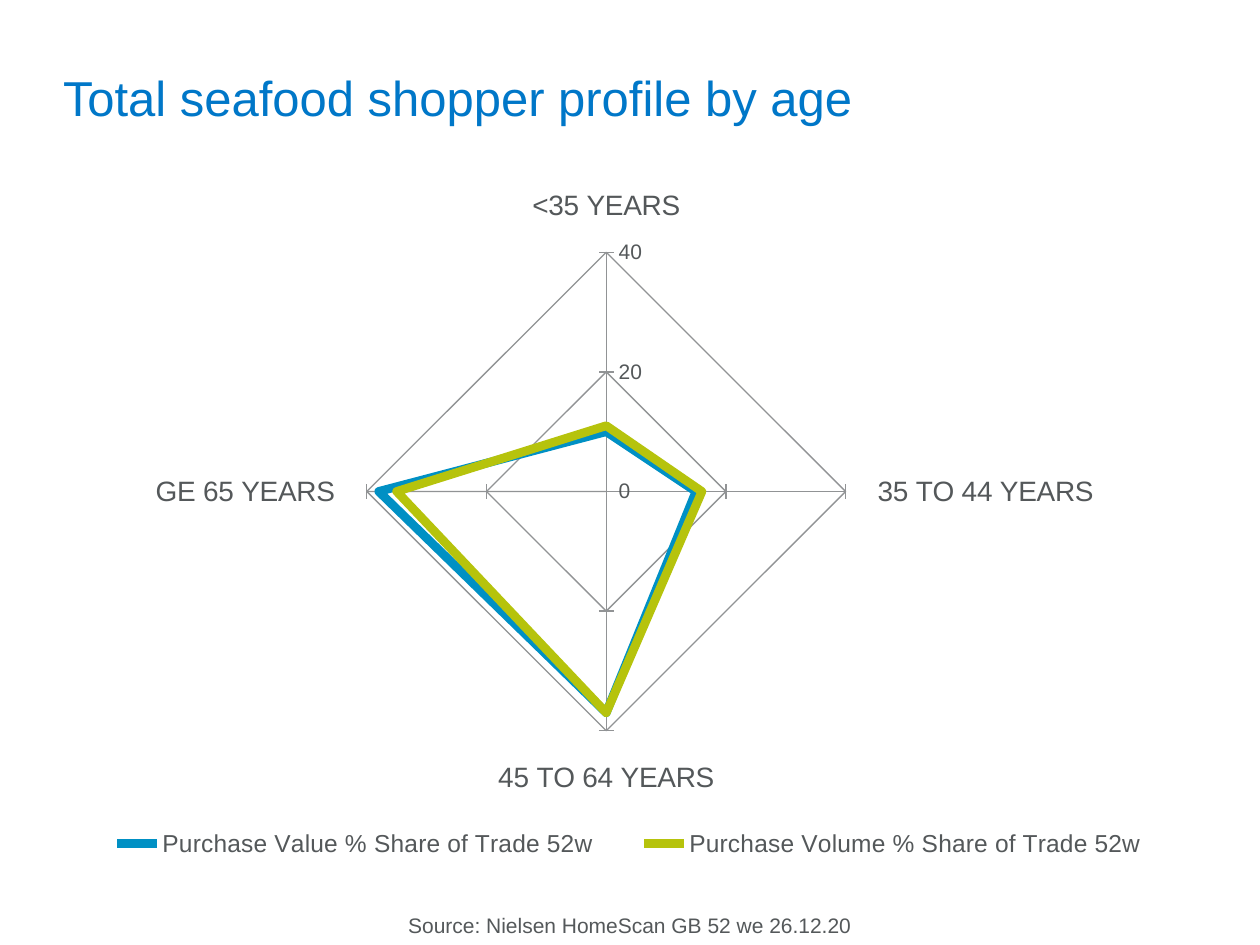
from pptx import Presentation
from pptx.chart.data import CategoryChartData
from pptx.dml.color import RGBColor
from pptx.enum.chart import XL_CHART_TYPE, XL_LEGEND_POSITION, XL_TICK_MARK
from pptx.enum.text import MSO_ANCHOR, PP_ALIGN
from pptx.oxml import parse_xml
from pptx.oxml.ns import nsdecls, qn
from pptx.util import Inches, Pt

RADAR = XL_CHART_TYPE.RADAR
BOTTOM = XL_LEGEND_POSITION.BOTTOM
OUTSIDE, CROSS = XL_TICK_MARK.OUTSIDE, XL_TICK_MARK.CROSS
MIDDLE = MSO_ANCHOR.MIDDLE
LEFT, CENTER = PP_ALIGN.LEFT, PP_ALIGN.CENTER

TITLE_BLUE = RGBColor(0x00, 0x77, 0xC8)
VALUE_BLUE = RGBColor(0x00, 0x90, 0xC4)
VOLUME_GREEN = RGBColor(0xB6, 0xC3, 0x0C)
TEXT_GREY = RGBColor(0x54, 0x58, 0x5A)
GRID_GREY = RGBColor(0x91, 0x93, 0x95)

# Content
TITLE = "Total seafood shopper profile by age"
SOURCE = "Source: Nielsen HomeScan GB 52 we 26.12.20"
AGES = ["<35 YEARS", "35 TO 44 YEARS", "45 TO 64 YEARS", "GE 65 YEARS"]
SERIES = [
    ("Purchase Value % Share of Trade 52w", (10, 15, 37, 38), VALUE_BLUE),
    ("Purchase Volume % Share of Trade 52w", (11, 16, 37, 35), VOLUME_GREEN),
]

# Places inside the chart, as fractions of its size
PLOT_LAYOUT = {"x": 0.27, "y": 0.09, "w": 0.42, "h": 0.7}
LEGEND_LAYOUT = {"x": 0.02, "y": 0.91, "w": 0.96, "h": 0.09}


def set_font(font, size, color):
    font.name, font.size, font.bold = "Arial", Pt(size), False
    font.color.rgb = color


def write_line(sp, text, size, color, align):
    tf = sp.text_frame
    tf.word_wrap = True
    p = tf.paragraphs[0]
    p.text = text
    p.alignment = align
    set_font(p.font, size, color)


def place_part(part, index, layout, target=""):
    old = part.find(qn("c:layout"))
    if old is not None:
        part.remove(old)
    sizes = "".join(f'<c:{k} val="{v}"/>' for k, v in layout.items())
    part.insert(index, parse_xml(
        f'<c:layout {nsdecls("c")}><c:manualLayout>{target}'
        f'<c:xMode val="edge"/><c:yMode val="edge"/>{sizes}'
        '</c:manualLayout></c:layout>'))


prs = Presentation()
prs.slide_width, prs.slide_height = Inches(10), Inches(7.5)
s = prs.slides.add_slide(prs.slide_layouts[5])

# Title
title = s.shapes.title
title.left, title.top = Inches(0.4), Inches(0.3)
title.width, title.height = Inches(9.17), Inches(0.94)
title.text_frame.vertical_anchor = MIDDLE
write_line(title, TITLE, 28, TITLE_BLUE, LEFT)

# Radar chart
data = CategoryChartData()
data.categories = AGES
for name, values, _ in SERIES:
    data.add_series(name, values)
chart = s.shapes.add_chart(RADAR, Inches(0.41), Inches(1.51),
                           Inches(9.17), Inches(5.43), data).chart
set_font(chart.font, 18, TEXT_GREY)
chart.has_title = False
place_part(chart.element.find(".//" + qn("c:plotArea")), 0, PLOT_LAYOUT,
           '<c:layoutTarget val="inner"/>')

plot = chart.plots[0]
plot.vary_by_categories = False
for series, (_, _, color) in zip(plot.series, SERIES):
    series.smooth = False
    series.format.line.color.rgb = color
    series.format.line.width = Pt(5)

# Axes
for axis, size, tick in ((chart.category_axis, 16, OUTSIDE),
                         (chart.value_axis, 12, CROSS)):
    set_font(axis.tick_labels.font, size, TEXT_GREY)
    axis.major_tick_mark = tick
    axis.has_major_gridlines = True
    for line in (axis.format.line, axis.major_gridlines.format.line):
        line.color.rgb = GRID_GREY
        line.width = Pt(0.75)
axis = chart.value_axis
axis.minimum_scale, axis.maximum_scale, axis.major_unit = 0, 40, 20
axis.tick_labels.number_format = "0"
axis.tick_labels.number_format_is_linked = False

# Legend
chart.has_legend = True
chart.legend.position = BOTTOM
chart.legend.include_in_layout = False
set_font(chart.legend.font, 14, TEXT_GREY)
place_part(chart.element.find(".//" + qn("c:legend")), 1, LEGEND_LAYOUT)

# Source line
source = s.shapes.add_textbox(0, Inches(7.19), Inches(10), Inches(0.3))
write_line(source, SOURCE, 12, TEXT_GREY, CENTER)

prs.save("out.pptx")
